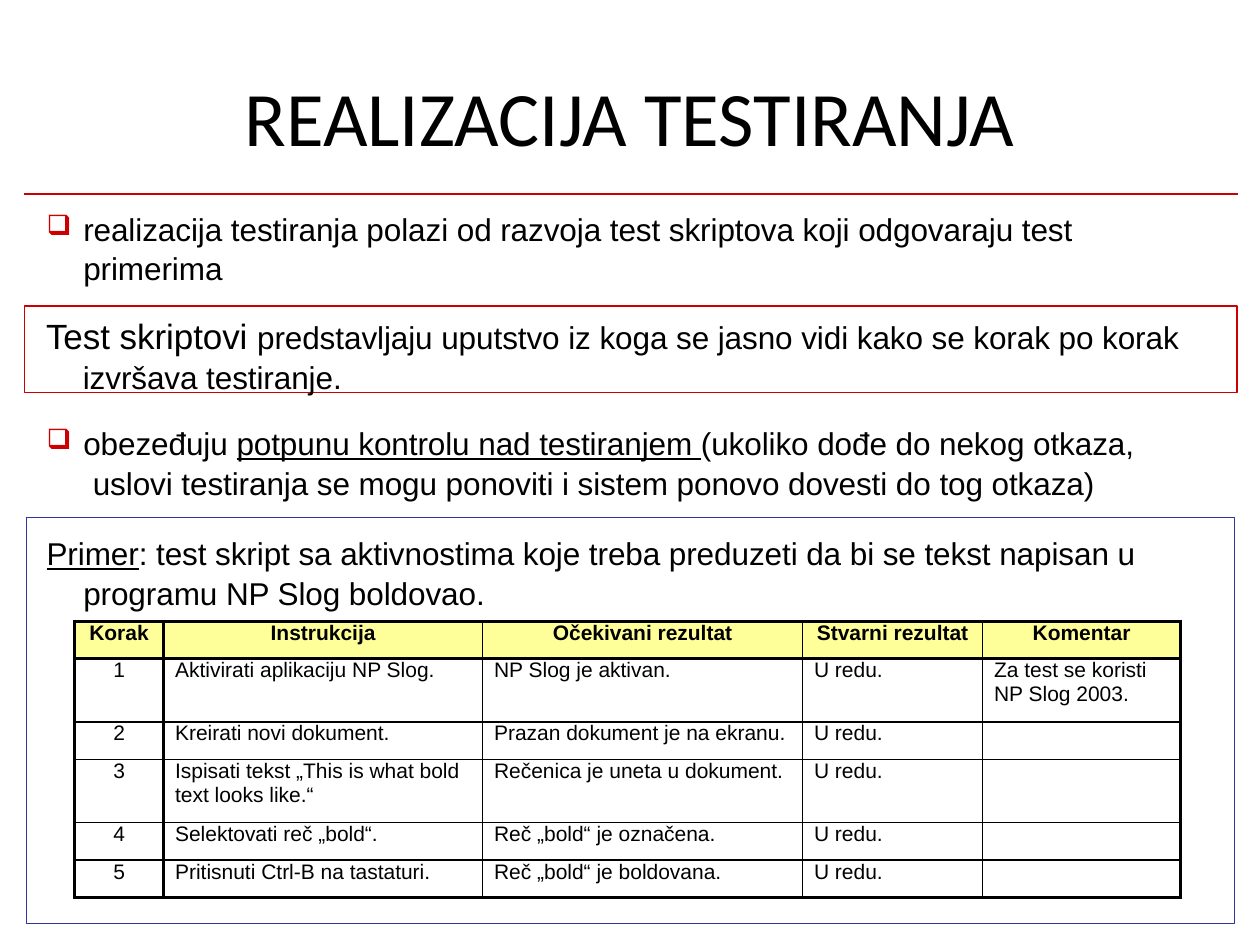
"""Builds the slide on running tests, with a sample test script in a table."""
import pptx
import pptx.dml.color
import pptx.enum.shapes
import pptx.enum.text
import pptx.oxml
import pptx.oxml.ns
import pptx.util
from lxml import etree

Cm, Pt = pptx.util.Cm, pptx.util.Pt
RGBColor = pptx.dml.color.RGBColor
ALIGN = pptx.enum.text.PP_ALIGN
ANCHOR = pptx.enum.text.MSO_ANCHOR
RECTANGLE = pptx.enum.shapes.MSO_SHAPE.RECTANGLE
STRAIGHT = pptx.enum.shapes.MSO_CONNECTOR.STRAIGHT

BLACK = RGBColor(0x00, 0x00, 0x00)
RED = RGBColor(0xCC, 0x00, 0x00)
BLUE = RGBColor(0x33, 0x33, 0x99)
YELLOW = RGBColor(0xFF, 0xFF, 0x99)

TITLE = "REALIZACIJA TESTIRANJA"
BULLET = {"marL": Cm(0.79), "indent": Cm(-0.74)}
HANGING = {"marL": Cm(1.17), "indent": Cm(-0.74)}
PLAIN = {"marL": Cm(0.79), "indent": 0}
UNDERLINED = {"underline": True}

INTRO = [
    {"runs": [("realizacija testiranja polazi od razvoja test skriptova koji odgovaraju test", {})],
     "indents": BULLET, "bullet": True},
    {"runs": [("primerima", {})], "indents": PLAIN},
]
DEFINITION = [
    {"runs": [("Test skriptovi ", {"size": Pt(20)}),
              ("predstavljaju uputstvo iz koga se jasno vidi kako se korak po korak "
               "izvršava testiranje.", {})],
     "indents": HANGING},
]
CONTROL = [
    {"runs": [("obezeđuju ", {}), ("potpunu kontrolu nad testiranjem ", UNDERLINED),
              ("(ukoliko dođe do nekog otkaza,", {})],
     "indents": BULLET, "bullet": True},
    {"runs": [("uslovi testiranja se mogu ponoviti i sistem ponovo dovesti do tog otkaza)", {})],
     "format": {"alignment": ALIGN.CENTER}},
    {"runs": [("Primer", UNDERLINED),
              (": test skript sa aktivnostima koje treba preduzeti da bi se tekst napisan u "
               "programu NP Slog boldovao.", {})],
     "indents": BULLET, "format": {"space_before": Pt(17.6)}},
]
HEADINGS = ["Korak", "Instrukcija", "Očekivani rezultat", "Stvarni rezultat", "Komentar"]
STEPS = [
    ("Aktivirati aplikaciju NP Slog.", "NP Slog je aktivan.", "Za test se koristi\vNP Slog 2003."),
    ("Kreirati novi dokument.", "Prazan dokument je na ekranu.", ""),
    ("Ispisati tekst „This is what bold text looks like.“", "Rečenica je uneta u dokument.", ""),
    ("Selektovati reč „bold“.", "Reč „bold“ je označena.", ""),
    ("Pritisnuti Ctrl-B na tastaturi.", "Reč „bold“ je boldovana.", ""),
]
OUTCOME = "U redu."
COLUMN_WIDTHS = [1.8, 6.43, 6.45, 3.63, 3.99]
ROW_HEIGHTS = [0.76, 1.27, 0.76, 1.27, 0.76, 0.76]


def apply(target, values):
    for name, value in values.items():
        setattr(target, name, value)


def format_font(font, values):
    apply(font, {"name": "Arial", "size": Pt(18), **values})
    font.color.rgb = BLACK


def add_bullet(properties):
    color = etree.SubElement(properties, pptx.oxml.ns.qn("a:buClr"))
    etree.SubElement(color, pptx.oxml.ns.qn("a:srgbClr"), val=str(RED))
    etree.SubElement(properties, pptx.oxml.ns.qn("a:buSzPct"), val="89000")
    etree.SubElement(properties, pptx.oxml.ns.qn("a:buChar"), char="❑")


def write_paragraphs(frame, paragraphs, top_inset=0):
    apply(frame, {"word_wrap": True, "vertical_anchor": ANCHOR.TOP, "margin_left": 0,
                  "margin_right": 0, "margin_top": top_inset, "margin_bottom": 0})
    for number, content in enumerate(paragraphs):
        paragraph = frame.add_paragraph() if number else frame.paragraphs[0]
        apply(paragraph, {"alignment": ALIGN.LEFT, "line_spacing": 1.05,
                          **content.get("format", {})})
        properties = paragraph._p.get_or_add_pPr()
        for name, value in content.get("indents", {}).items():
            properties.set(name, str(int(value)))
        if content.get("bullet"):
            add_bullet(properties)
        for words, values in content["runs"]:
            run = paragraph.add_run()
            run.text = words
            format_font(run.font, values)
            run._r.get_or_add_rPr().set("spc", "-7")


def add_frame(slide, place, color):
    frame = slide.shapes.add_shape(RECTANGLE, *map(Cm, place))
    frame.shadow.inherit = False
    frame.fill.background()
    frame.line.color.rgb = color
    frame.line.width = Pt(0.72)
    return frame


def set_borders(cell, widths):
    properties = cell._tc.get_or_add_tcPr()
    for position, (side, width) in enumerate(widths.items()):
        border = etree.Element(pptx.oxml.ns.qn(f"a:ln{side}"), w=str(Pt(width)))
        fill = etree.SubElement(border, pptx.oxml.ns.qn("a:solidFill"))
        etree.SubElement(fill, pptx.oxml.ns.qn("a:srgbClr"), val=str(BLACK))
        properties.insert(position, border)


def add_script_table(slide):
    rows = [HEADINGS] + [(str(number), instruction, expected, OUTCOME, comment)
                         for number, (instruction, expected, comment) in enumerate(STEPS, 1)]
    last_row, last_column = len(rows) - 1, len(HEADINGS) - 1
    table = slide.shapes.add_table(len(rows), len(HEADINGS), Cm(1.5), Cm(12.52),
                                   Cm(sum(COLUMN_WIDTHS)), Cm(sum(ROW_HEIGHTS))).table
    for column, width in zip(table.columns, COLUMN_WIDTHS):
        column.width = Cm(width)
    for row, height in zip(table.rows, ROW_HEIGHTS):
        row.height = Cm(height)
    for r, texts in enumerate(rows):
        for c, words in enumerate(texts):
            cell = table.cell(r, c)
            centred = r == 0 or c == 0
            apply(cell, {"margin_left": 0 if centred else Cm(0.23), "margin_right": 0,
                         "margin_top": 0, "margin_bottom": 0})
            if r == 0:
                cell.fill.solid()
                cell.fill.fore_color.rgb = YELLOW
            else:
                cell.fill.background()
            set_borders(cell, {"L": 2 if c <= 1 else 1,
                               "R": 2 if c in (0, last_column) else 1,
                               "T": 2 if r <= 1 else 1,
                               "B": 2 if r in (0, last_row) else 1})
            paragraph = cell.text_frame.paragraphs[0]
            paragraph.text = words
            paragraph.alignment = ALIGN.CENTER if centred else ALIGN.LEFT
            for run in paragraph.runs:
                format_font(run.font, {"size": Pt(12), "bold": r == 0})
            if not words:
                end = etree.SubElement(paragraph._p, pptx.oxml.ns.qn("a:endParaRPr"))
                end.set("sz", "1200")


def main():
    deck = pptx.Presentation()
    apply(deck, {"slide_width": Cm(25.4), "slide_height": Cm(19.05)})
    slide = deck.slides.add_slide(deck.slide_layouts[5])

    title = slide.shapes.title
    apply(title, {"left": Cm(1.27), "top": Cm(1.4), "width": Cm(22.86), "height": Cm(1.88)})
    title.text_frame.text = TITLE
    apply(title.text_frame, {"margin_left": 0, "margin_right": 0, "margin_top": 0,
                             "margin_bottom": 0, "vertical_anchor": ANCHOR.MIDDLE})
    heading = title.text_frame.paragraphs[0]
    heading.alignment = ALIGN.CENTER
    format_font(heading.runs[0].font, {"name": "Calibri", "size": Pt(44)})

    rule = slide.shapes.add_connector(STRAIGHT, Cm(0.48), Cm(3.91), Cm(24.95), Cm(3.91))
    rule.line.color.rgb = RED
    rule.line.width = Pt(0.96)
    etree.SubElement(rule._element.spPr, pptx.oxml.ns.qn("a:effectLst"))

    intro = slide.shapes.add_textbox(Cm(0.89), Cm(4.19), Cm(20.88), Cm(1.55))
    write_paragraphs(intro.text_frame, INTRO)
    definition = add_frame(slide, (0.5, 6.17, 24.44, 1.75), RED)
    write_paragraphs(definition.text_frame, DEFINITION, Cm(0.13))
    control = slide.shapes.add_textbox(Cm(0.89), Cm(8.51), Cm(22.15), Cm(3.68))
    write_paragraphs(control.text_frame, CONTROL)

    add_script_table(slide)
    add_frame(slide, (0.53, 10.44, 24.36, 8.18), BLUE)
    deck.save("out.pptx")


if __name__ == "__main__":
    main()
